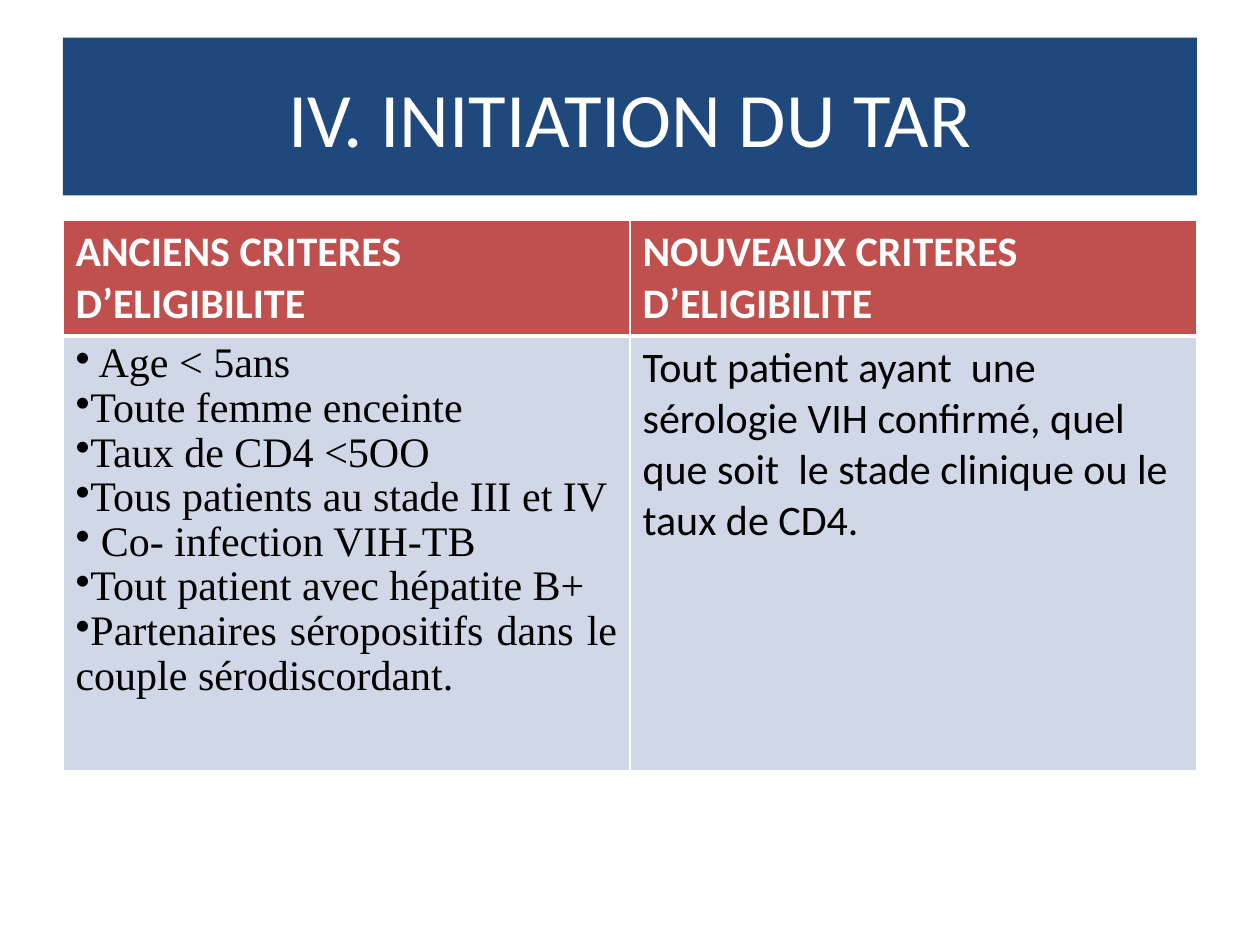
from lxml import etree
from pptx import Presentation
from pptx.dml.color import RGBColor
from pptx.enum.shapes import MSO_SHAPE
from pptx.enum.text import MSO_ANCHOR, PP_ALIGN
from pptx.oxml.ns import qn
from pptx.util import Cm, Pt

RECT = MSO_SHAPE.RECTANGLE
MIDDLE = MSO_ANCHOR.MIDDLE
LEFT, CENTER, JUSTIFY = PP_ALIGN.LEFT, PP_ALIGN.CENTER, PP_ALIGN.JUSTIFY


def rgb(value):
    return RGBColor.from_string(value)


def write(tf, lines, size=24, font="Calibri", color="000000", bold=False,
          align=LEFT, bullet=None, spacing=None):
    tf.word_wrap = True
    for i, line in enumerate(lines):
        p = tf.paragraphs[0] if i == 0 else tf.add_paragraph()
        p.alignment = align
        if spacing:
            p.line_spacing = spacing
        if bullet:
            pPr = p._p.get_or_add_pPr()
            pPr.set("marL", "0")
            pPr.set("indent", "0")
            etree.SubElement(pPr, qn("a:buChar")).set("char", bullet)
        r = p.add_run()
        r.text = line
        r.font.size = Pt(size)
        r.font.name = font
        r.font.bold = bold
        r.font.color.rgb = rgb(color)


prs = Presentation()
prs.slide_width, prs.slide_height = Cm(25.4), Cm(19.05)
s = prs.slides.add_slide(prs.slide_layouts[6])

sp = s.shapes.add_shape(RECT, Cm(1.27), Cm(0.76), Cm(22.86), Cm(3.18))
sp.shadow.inherit = False
sp.fill.solid()
sp.fill.fore_color.rgb = rgb("1F497D")
sp.line.fill.background()
sp.text_frame.vertical_anchor = MIDDLE
write(sp.text_frame, ["IV. INITIATION DU TAR"], size=44, color="FFFFFF", align=CENTER)

criteria = [
    " Age < 5ans",
    "Toute femme enceinte",
    "Taux de CD4 <5OO",
    "Tous patients au stade III et IV",
    " Co- infection VIH-TB",
    "Tout patient avec hépatite B+",
    "Partenaires séropositifs dans le couple sérodiscordant.",
]
header = {"color": "FFFFFF", "bold": True}
listing = {"font": "Times New Roman", "align": JUSTIFY, "bullet": "•", "spacing": 0.96}
rows = [
    [(["ANCIENS CRITERES  D’ELIGIBILITE"], header),
     (["NOUVEAUX CRITERES D’ELIGIBILITE"], header)],
    [(criteria, listing),
     (["Tout patient ayant  une sérologie VIH confirmé, quel que soit  "
       "le stade clinique ou le taux de CD4."], {})],
]
fills = ["C0504D", "D0D8E8"]
heights = [Cm(2.31), Cm(8.76)]

table = s.shapes.add_table(2, 2, Cm(1.27), Cm(4.45), Cm(22.86), sum(heights)).table
for i, row in enumerate(rows):
    table.rows[i].height = heights[i]
    for j, (lines, style) in enumerate(row):
        cell = table.cell(i, j)
        tcPr = cell._tc.get_or_add_tcPr()
        for side in "LRTB":
            thick = (i, side) in [(0, "B"), (1, "T")]
            ln = etree.SubElement(tcPr, qn(f"a:ln{side}"), w=str(Pt(3 if thick else 1)))
            fill = etree.SubElement(ln, qn("a:solidFill"))
            etree.SubElement(fill, qn("a:srgbClr"), val="FFFFFF")
        cell.fill.solid()
        cell.fill.fore_color.rgb = rgb(fills[i])
        write(cell.text_frame, lines, **style)

prs.save("out.pptx")
